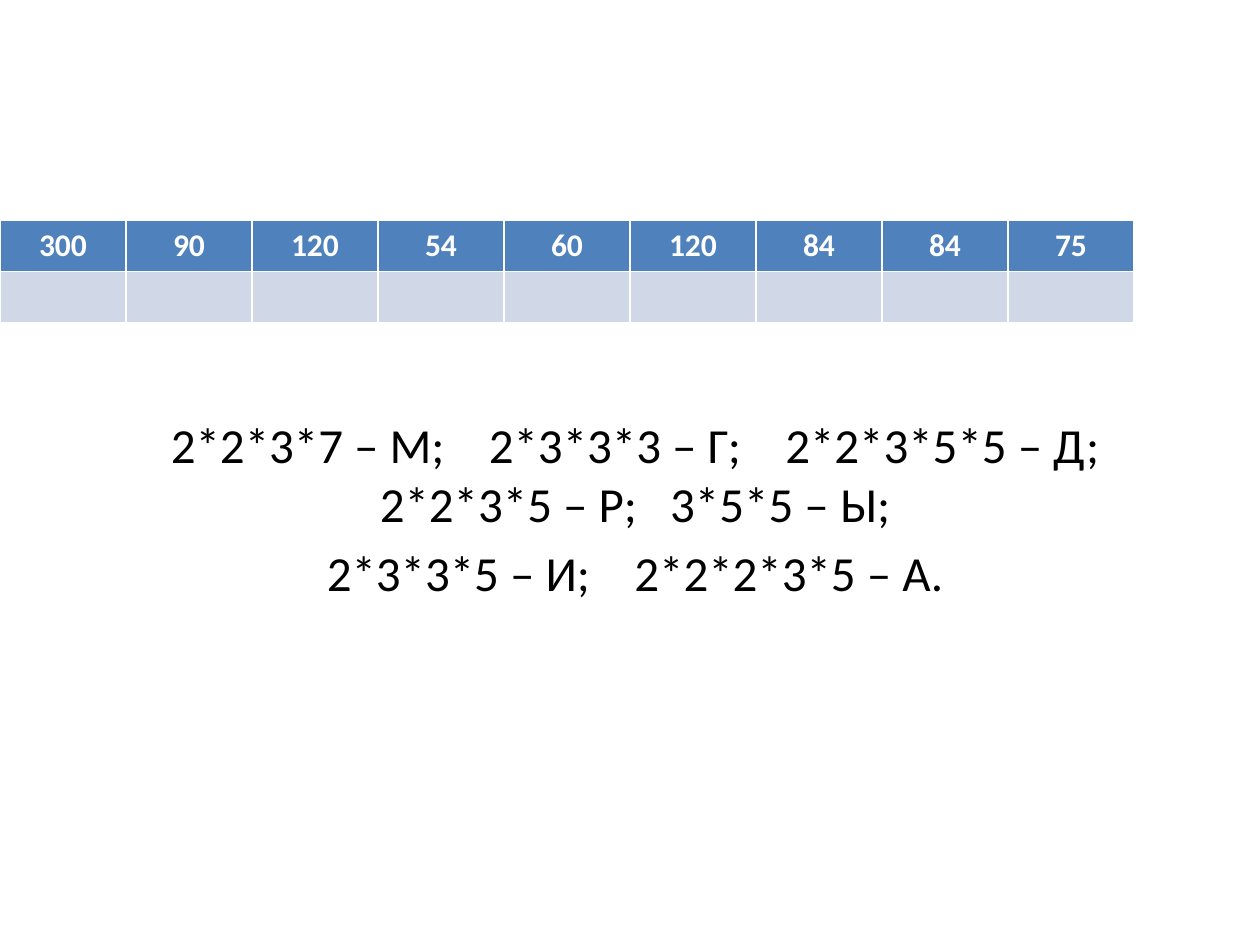
from dataclasses import dataclass

from pptx import Presentation
from pptx.dml.color import RGBColor
from pptx.enum.text import MSO_ANCHOR, PP_ALIGN
from pptx.util import Inches, Pt


@dataclass(frozen=True)
class Theme:
    font: str = "Calibri"
    header_fill: RGBColor = RGBColor(0x4F, 0x81, 0xBD)
    answer_fill: RGBColor = RGBColor(0xD0, 0xD8, 0xE8)
    header_text: RGBColor = RGBColor(0xFF, 0xFF, 0xFF)
    body_text: RGBColor = RGBColor(0, 0, 0)
    table_size: int = 18
    body_size: int = 28


THEME = Theme()
NUMBERS = ["300", "90", "120", "54", "60", "120", "84", "84", "75"]

# Each factorization is followed by the extra width of its gap, in points.
KEY_PARAGRAPHS = [
    [
        ("2*2*3*7 – М;", 19),
        ("2*3*3*3 – Г;", 19),
        ("2*2*3*5*5 – Д;", 0),
        ("2*2*3*5 – Р;", 12.7),
        ("3*5*5 – Ы;", None),
    ],
    [("2*3*3*5 – И;", 19), ("2*2*2*3*5 – А.", None)],
]


def add_text(paragraph, text, *, size, color, bold=False, spacing=0):
    """Append a centred run; spacing widens each character, in points."""
    paragraph.alignment = PP_ALIGN.CENTER
    run = paragraph.add_run()
    run.text = text
    run.font.name = THEME.font
    run.font.size = Pt(size)
    run.font.bold = bold
    run.font.color.rgb = color
    if spacing:
        run.font._element.set("spc", str(round(spacing * 100)))


prs = Presentation()
prs.slide_width, prs.slide_height = Inches(10), Inches(7.5)
slide = prs.slides.add_slide(prs.slide_layouts[6])

# Factorization key
key_frame = slide.shapes.add_textbox(
    Inches(0.79), Inches(3.18), Inches(8.5), Inches(1.64)
).text_frame
key_frame.word_wrap = True
key_frame.vertical_anchor = MSO_ANCHOR.BOTTOM
for index, factorizations in enumerate(KEY_PARAGRAPHS):
    paragraph = key_frame.add_paragraph() if index else key_frame.paragraphs[0]
    paragraph.space_before = Pt(0.2 * THEME.body_size)
    for factorization, gap in factorizations:
        add_text(paragraph, factorization, size=THEME.body_size, color=THEME.body_text)
        if gap is not None:
            add_text(paragraph, " ", size=THEME.body_size, color=THEME.body_text, spacing=gap)

# Numbers with empty cells for the letters; the table style draws white borders
cipher = slide.shapes.add_table(
    2, len(NUMBERS), Inches(0), Inches(1.75), Inches(len(NUMBERS)), Inches(0.81)
).table
for column, number in enumerate(NUMBERS):
    header, answer = cipher.cell(0, column), cipher.cell(1, column)
    for cell, fill in ((header, THEME.header_fill), (answer, THEME.answer_fill)):
        cell.fill.solid()
        cell.fill.fore_color.rgb = fill
    add_text(
        header.text_frame.paragraphs[0],
        number,
        size=THEME.table_size,
        color=THEME.header_text,
        bold=True,
    )

prs.save("out.pptx")
